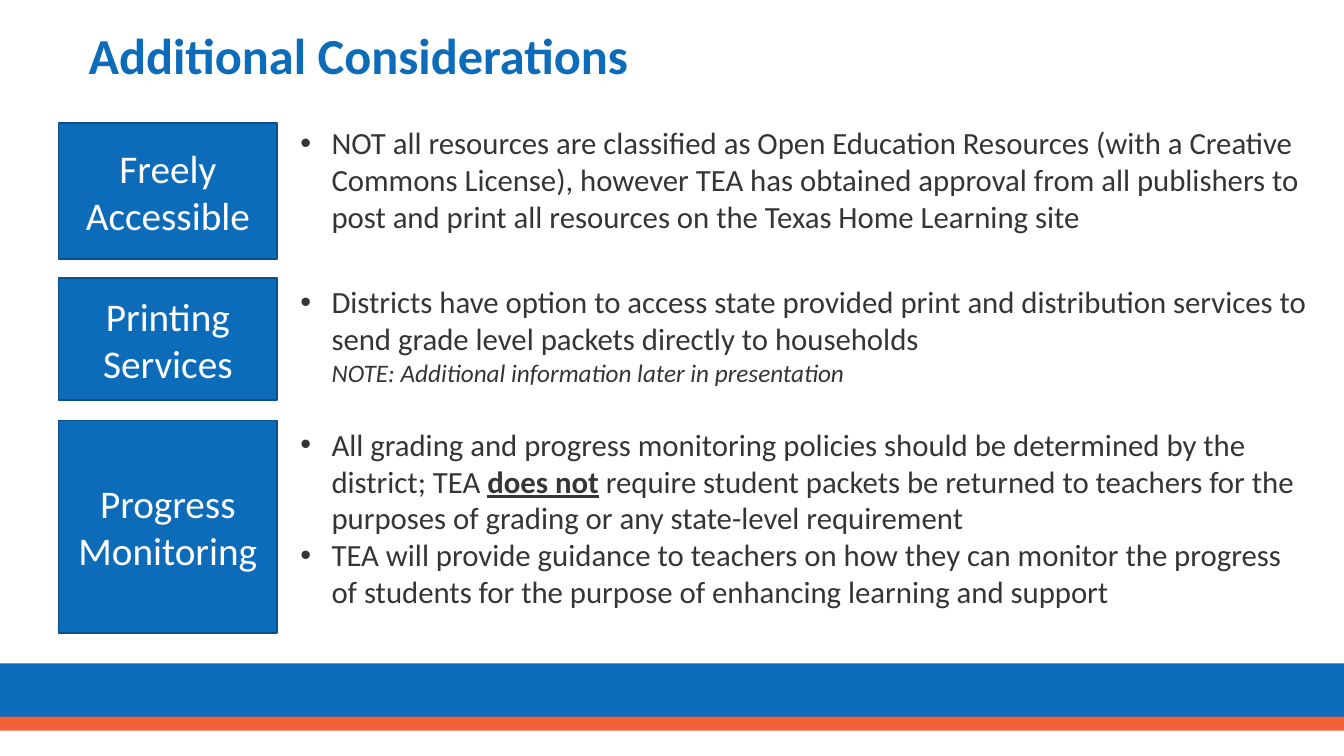
import pptx
import pptx.dml.color
import pptx.enum.shapes
import pptx.enum.text
import pptx.oxml.ns
import pptx.util
import lxml.etree
from dataclasses import dataclass

Inches = pptx.util.Inches
Align = pptx.enum.text.PP_ALIGN
Anchor = pptx.enum.text.MSO_ANCHOR
AutoSize = pptx.enum.text.MSO_AUTO_SIZE


@dataclass(frozen=True)
class Theme:
    font = "Calibri"
    blue = pptx.dml.color.RGBColor.from_string("0D6CB9")
    edge = pptx.dml.color.RGBColor.from_string("0A5089")
    orange = pptx.dml.color.RGBColor.from_string("F16038")
    ink = pptx.dml.color.RGBColor.from_string("363534")
    white = pptx.dml.color.RGBColor.from_string("FFFFFF")
    title_size = pptx.util.Pt(36)
    label_size = pptx.util.Pt(28)
    body_size = pptx.util.Pt(22)
    note_size = pptx.util.Pt(18)


theme = Theme()


def add_block(left, top, width, height, fill):
    block = slide.shapes.add_shape(
        pptx.enum.shapes.MSO_SHAPE.RECTANGLE,
        Inches(left), Inches(top), Inches(width), Inches(height))
    block.shadow.inherit = False
    block.fill.solid()
    block.fill.fore_color.rgb = fill
    block.line.fill.background()
    return block


def add_words(paragraph, words, color, **formats):
    run = paragraph.add_run()
    run.text = words
    run.font.color.rgb = color
    for key, value in {"name": theme.font, **formats}.items():
        setattr(run.font, key, value)


deck = pptx.Presentation()
deck.slide_width = Inches(13.33)
deck.slide_height = Inches(7.5)
slide = deck.slides.add_slide(deck.slide_layouts[6])

add_block(0, 6.58, 13.33, 0.58, theme.blue)
add_block(0, 7.11, 13.33, 0.14, theme.orange)

title = slide.shapes.add_textbox(Inches(0.78), Inches(0.17), Inches(12.16), Inches(0.82))
title.text_frame.word_wrap = True
title.text_frame.vertical_anchor = Anchor.MIDDLE
heading = title.text_frame.paragraphs[0]
heading.line_spacing = 0.9
add_words(heading, "Additional Considerations", theme.blue, size=theme.title_size, bold=True)

plain = {"size": theme.body_size}
stressed = {"size": theme.body_size, "bold": True, "underline": True}
note = {"size": theme.note_size, "italic": True}

considerations = [
    ("Freely Accessible", 1.22, 1.35, 1.18, 1.58, [
        [("NOT all resources are classified as Open Education Resources (with a Creative Commons License), "
          "however TEA has obtained approval from all publishers to post and print all resources on the "
          "Texas Home Learning site", plain)],
    ]),
    ("Printing Services", 2.76, 1.21, 2.76, 1.14, [
        [("Districts have option to access state provided print and distribution services to send grade "
          "level packets directly to households", plain),
         ("NOTE: Additional information later in presentation", note)],
    ]),
    ("Progress Monitoring", 4.17, 2.11, 4.17, 1.95, [
        [("All grading and progress monitoring policies should be determined by the district; TEA ", plain),
         ("does not", stressed),
         (" require student packets be returned to teachers for the purposes of grading or any "
          "state-level requirement", plain)],
        [("TEA will provide guidance to teachers on how they can monitor the progress of students for the "
          "purpose of enhancing learning and support", plain)],
    ]),
]

for topic, topic_top, topic_height, details_top, details_height, points in considerations:
    label = add_block(0.58, topic_top, 2.17, topic_height, theme.blue)
    label.line.color.rgb = theme.edge
    label.line.width = pptx.util.Pt(1)
    label.text_frame.word_wrap = True
    label.text_frame.vertical_anchor = Anchor.MIDDLE
    caption = label.text_frame.paragraphs[0]
    caption.alignment = Align.CENTER
    add_words(caption, topic, theme.white, size=theme.label_size)

    details = slide.shapes.add_textbox(
        Inches(2.88), Inches(details_top), Inches(10.21), Inches(details_height))
    details.text_frame.word_wrap = True
    details.text_frame.auto_size = AutoSize.SHAPE_TO_FIT_TEXT
    for index, point in enumerate(points):
        bullet = details.text_frame.add_paragraph() if index else details.text_frame.paragraphs[0]
        properties = bullet._p.get_or_add_pPr()
        properties.set("marL", str(Inches(0.31)))
        properties.set("indent", str(-Inches(0.31)))
        lxml.etree.SubElement(properties, pptx.oxml.ns.qn("a:buFont"), typeface="Arial")
        lxml.etree.SubElement(properties, pptx.oxml.ns.qn("a:buChar"), char="•")
        for words, formats in point:
            if formats is note:
                bullet.add_line_break()
            add_words(bullet, words, theme.ink, **formats)

deck.save("out.pptx")
